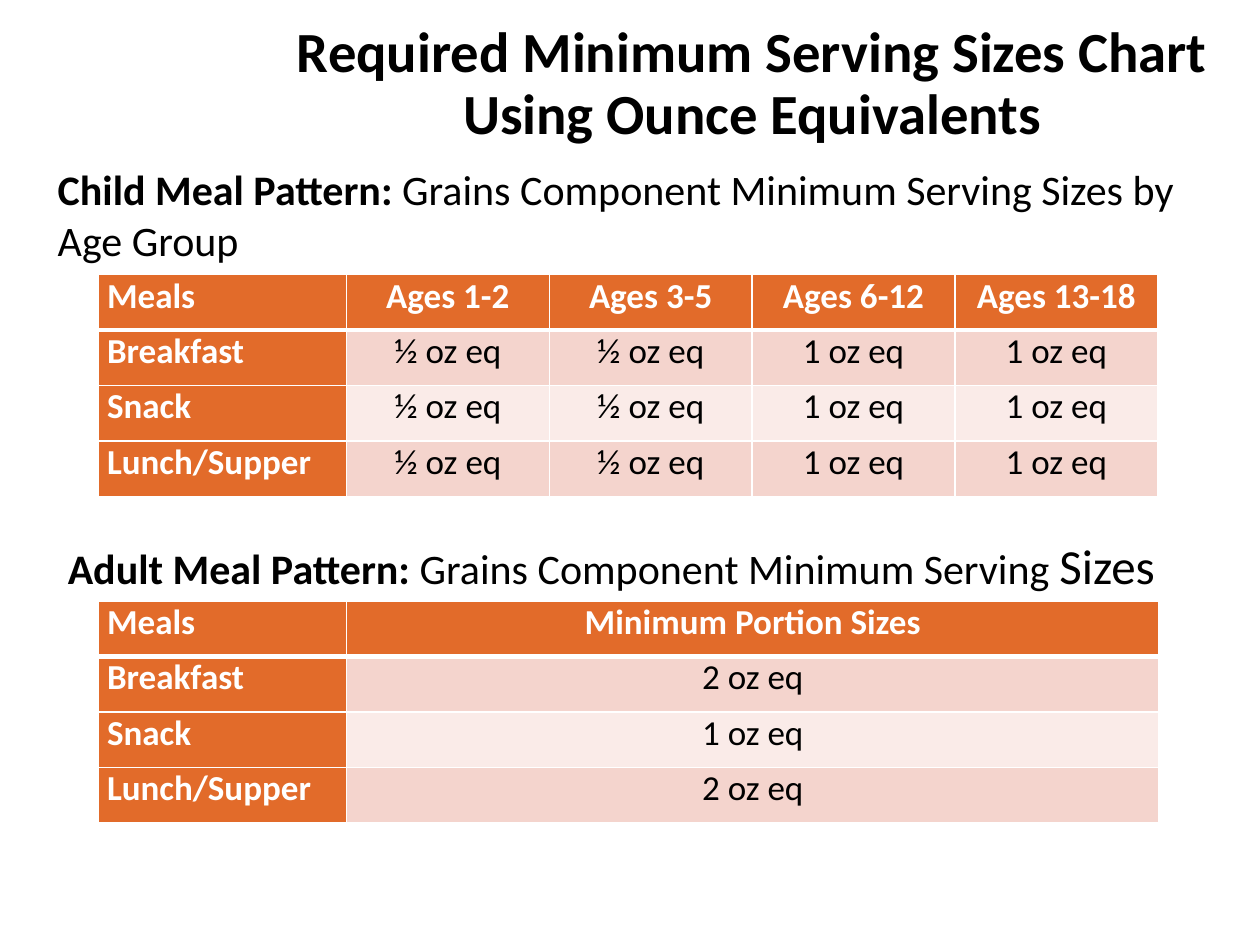
from dataclasses import dataclass

import pptx
import pptx.dml.color
import pptx.enum.text
import pptx.oxml
import pptx.oxml.ns
import pptx.util

Inches = pptx.util.Inches
Align = pptx.enum.text.PP_ALIGN
Anchor = pptx.enum.text.MSO_ANCHOR

FONT = "Calibri"
BLACK, WHITE, ORANGE = "000000", "FFFFFF", "E26B2A"
BANDS = ("F4D4CD", "FAEBE8")
TABLE_LEFT, ROW_HEIGHT = 0.78, 0.44


@dataclass
class Span:
    text: str
    size: float = 24
    bold: bool = False
    color: str = BLACK


@dataclass
class Heading:
    left: float
    top: float
    width: float
    height: float
    spans: list[Span]


@dataclass
class MealTable:
    top: float
    widths: list[float]
    rows: list[list[str]]


HEADINGS = [
    Heading(0.36, 1.25, 9.31, 0.91, [
        Span("Child Meal Pattern: ", bold=True),
        Span("Grains Component Minimum Serving Sizes by Age Group"),
    ]),
    Heading(0.44, 4.2, 9.44, 0.57, [
        Span("Adult Meal Pattern: ", bold=True),
        Span("Grains Component Minimum Serving "),
        Span("Sizes", size=28),
    ]),
]

CHILD_SERVINGS = ["½ oz eq"] * 2 + ["1 oz eq"] * 2
TABLES = [
    MealTable(2.18, [1.97] + [1.61] * 4, [
        ["Meals", "Ages 1-2", "Ages 3-5", "Ages 6-12", "Ages 13-18"],
        *[[meal, *CHILD_SERVINGS] for meal in ("Breakfast", "Snack", "Lunch/Supper")],
    ]),
    MealTable(4.77, [1.97, 6.45], [
        ["Meals", "Minimum Portion Sizes"],
        ["Breakfast", "2 oz eq"],
        ["Snack", "1 oz eq"],
        ["Lunch/Supper", "2 oz eq"],
    ]),
]


def rgb(value: str) -> pptx.dml.color.RGBColor:
    return pptx.dml.color.RGBColor.from_string(value)


def apply(target, values: dict) -> None:
    for name, value in values.items():
        setattr(target, name, value)


def format_font(font, span: Span) -> None:
    apply(font, {"name": FONT, "size": pptx.util.Pt(span.size), "bold": span.bold})
    font.color.rgb = rgb(span.color)


def add_span(para, span: Span) -> None:
    run = para.add_run()
    run.text = span.text
    format_font(run.font, span)


def place(shape, left: float, top: float, width: float, height: float) -> None:
    apply(shape, {"left": Inches(left), "top": Inches(top),
                  "width": Inches(width), "height": Inches(height)})


def draw_title(page) -> None:
    title = page.shapes.title
    place(title, 2.06, 0.12, 7.82, 1.11)
    apply(title.text_frame, {"word_wrap": True, "vertical_anchor": Anchor.MIDDLE,
                             "auto_size": pptx.enum.text.MSO_AUTO_SIZE.NONE})
    para = title.text_frame.paragraphs[0]
    apply(para, {"alignment": Align.CENTER, "line_spacing": 0.9})
    format_font(para.font, Span("", 32.4, True))
    add_span(para, Span("Required Minimum Serving Sizes Chart", 32.4, True))
    para.add_line_break()
    add_span(para, Span("Using Ounce Equivalents", 32.4, True))


def draw_heading(page, heading: Heading) -> None:
    box = page.shapes.add_textbox(0, 0, 0, 0)
    place(box, heading.left, heading.top, heading.width, heading.height)
    box.text_frame.word_wrap = True
    for span in heading.spans:
        add_span(box.text_frame.paragraphs[0], span)


def set_borders(cell, widths: dict[str, float]) -> None:
    properties = cell._tc.get_or_add_tcPr()
    for side, width in widths.items():
        properties.append(pptx.oxml.parse_xml(
            f'<a:{side} {pptx.oxml.ns.nsdecls("a")} w="{pptx.util.Pt(width)}">'
            f'<a:solidFill><a:srgbClr val="{WHITE}"/></a:solidFill></a:{side}>'
        ))


def draw_cell(cell, text: str, row: int, column: int) -> None:
    heading = row == 0 or column == 0
    set_borders(cell, {"lnL": 1, "lnR": 1, "lnT": 3 if row == 1 else 1,
                       "lnB": 3 if row == 0 else 1})
    cell.fill.solid()
    cell.fill.fore_color.rgb = rgb(ORANGE if heading else BANDS[(row - 1) % 2])
    apply(cell, {"margin_left": Inches(0.07), "margin_right": Inches(0.07),
                 "margin_top": 0, "margin_bottom": 0,
                 "vertical_anchor": Anchor.TOP})
    para = cell.text_frame.paragraphs[0]
    para.alignment = Align.CENTER if column else Align.LEFT
    add_span(para, Span(text, 20, heading, WHITE if heading else BLACK))


def draw_table(page, meals: MealTable) -> None:
    frame = page.shapes.add_table(
        len(meals.rows), len(meals.widths), Inches(TABLE_LEFT), Inches(meals.top),
        Inches(sum(meals.widths)), Inches(ROW_HEIGHT * len(meals.rows)))
    table = frame.table
    for column, width in zip(table.columns, meals.widths):
        column.width = Inches(width)
    for row, texts in enumerate(meals.rows):
        table.rows[row].height = Inches(ROW_HEIGHT)
        for column, text in enumerate(texts):
            draw_cell(table.cell(row, column), text, row, column)


def main() -> None:
    deck = pptx.Presentation()
    apply(deck, {"slide_width": Inches(10), "slide_height": Inches(7.5)})
    page = deck.slides.add_slide(deck.slide_layouts.get_by_name("Title Only"))
    draw_title(page)
    for meals in TABLES:
        draw_table(page, meals)
    for heading in HEADINGS:
        draw_heading(page, heading)
    deck.save("out.pptx")


if __name__ == "__main__":
    main()
